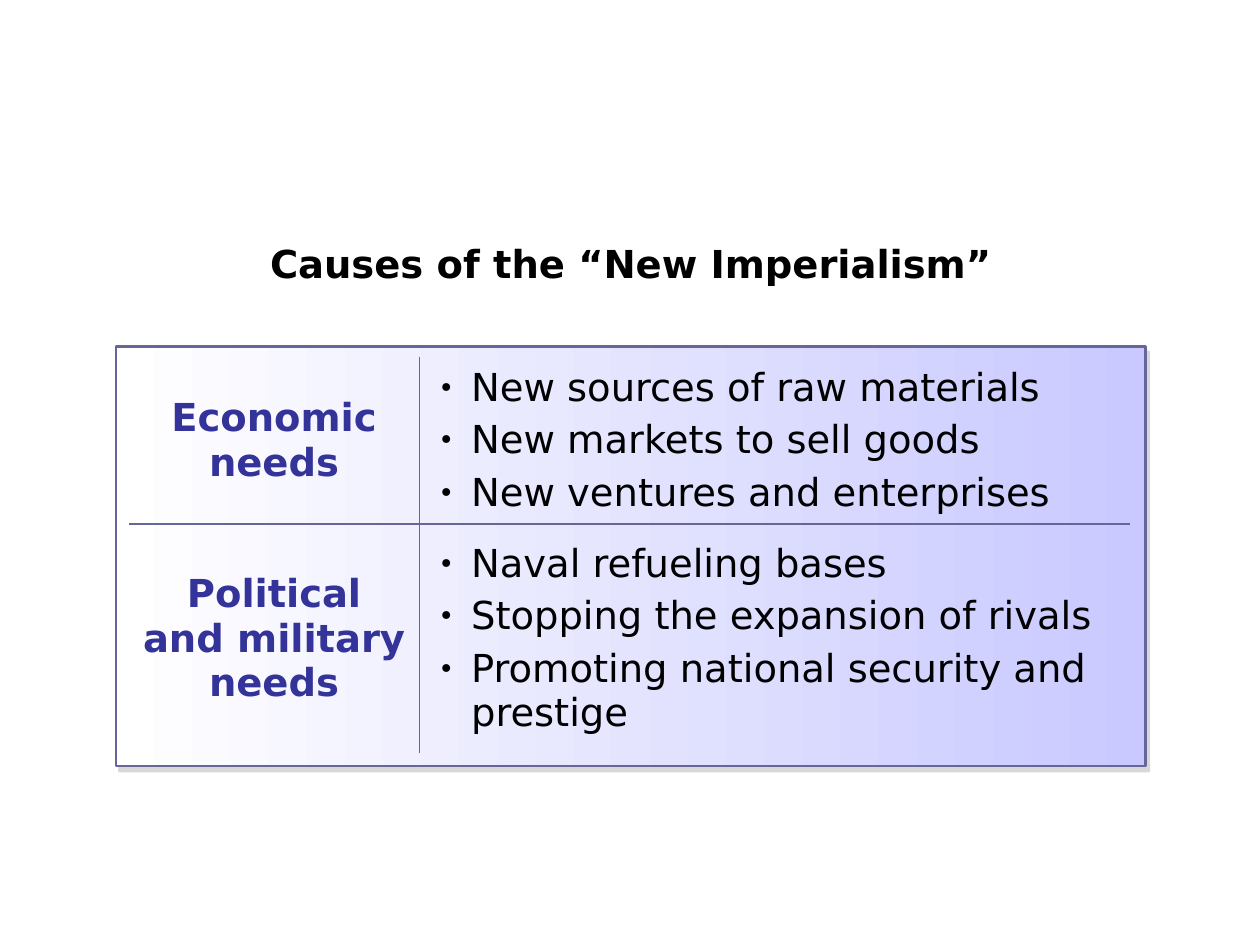
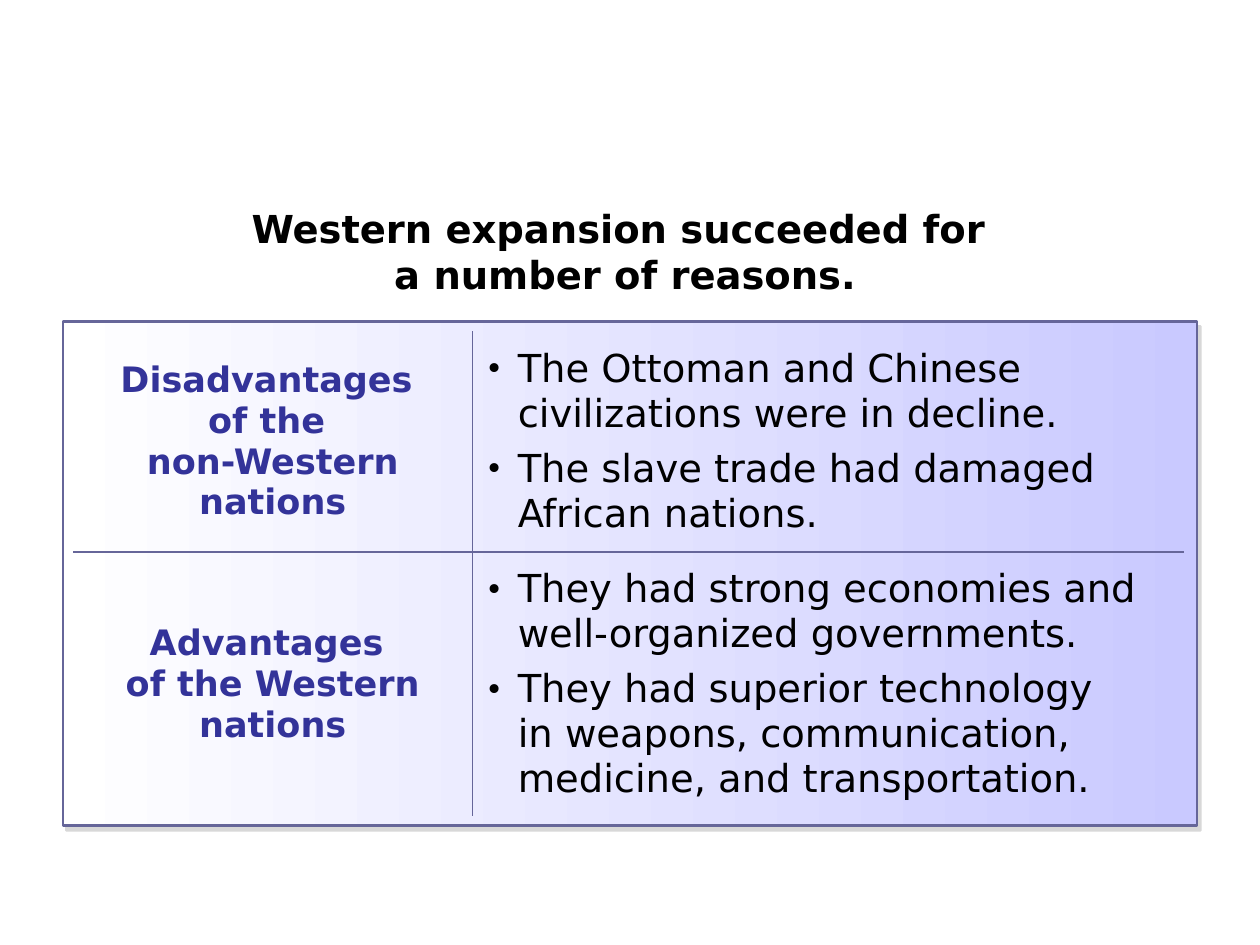
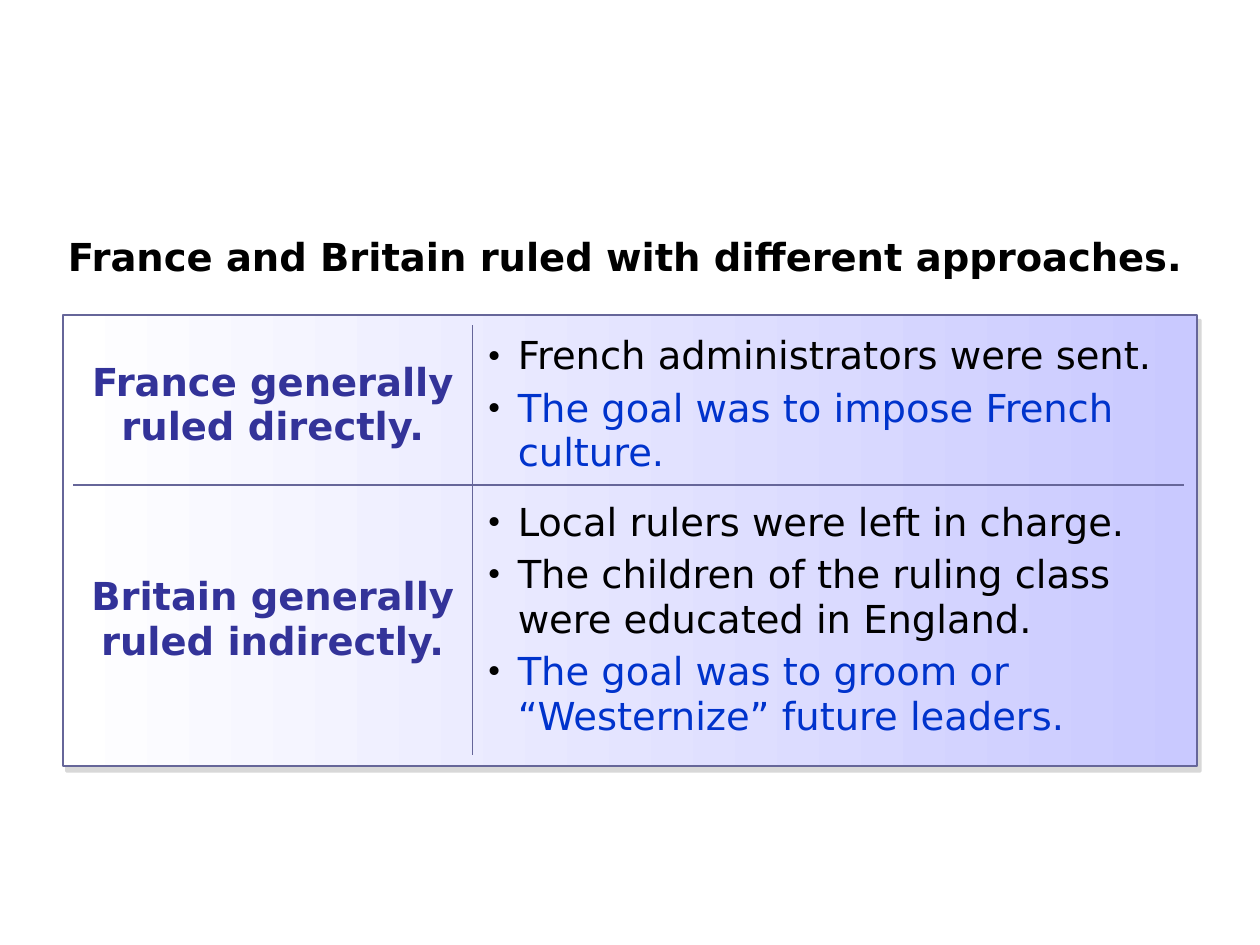
"""Build three slides that summarise the New Imperialism in titled two-row panels."""
import dataclasses

import lxml.etree
import pptx
import pptx.dml.color
import pptx.enum.shapes
import pptx.enum.text
import pptx.oxml.ns
import pptx.util

Inches = pptx.util.Inches
Pt = pptx.util.Pt
CENTER = pptx.enum.text.PP_ALIGN.CENTER


@dataclasses.dataclass(frozen=True)
class Theme:
    """Colours, type sizes and spacing shared by the slides."""
    font: str = "DejaVu Sans"
    text: str = "000000"
    label: str = "333399"
    goal: str = "0033CC"
    rule: str = "666699"
    shadow: str = "B2B2B2"
    panel_start: str = "FFFFFF"
    panel_end: str = "C9C9FF"
    body_size: int = 22
    small_size: int = 20
    lead: float = 0.2
    frame_width: float = 1.5
    rule_width: float = 1
    plain_table: str = "{2D5ABB26-0587-4C30-8999-92F81FD0307C}"


@dataclasses.dataclass(frozen=True)
class Box:
    """A rectangle in inches."""
    left: float
    top: float
    width: float
    height: float

    def lengths(self):
        """Return the four sides as lengths."""
        return [Inches(side) for side in dataclasses.astuple(self)]


@dataclasses.dataclass(frozen=True)
class Topic:
    """A row label with its points, of which some state a goal."""
    label: str
    points: tuple
    goals: tuple = ()


@dataclasses.dataclass(frozen=True)
class Panel:
    """The frame, grid and text settings of one slide's table."""
    box: Box
    columns: tuple
    rows: tuple
    inset: float = 0.08
    point_margin: float = 0.1
    bullet_percent: int = 80
    label_size: int = 22
    space_after: float = 0


THEME = Theme()


def rgb(value):
    """Return a colour from its hexadecimal value."""
    return pptx.dml.color.RGBColor.from_string(value)


def add_node(parent, tag, **attributes):
    """Append a drawing element with its attributes."""
    node = lxml.etree.SubElement(parent, pptx.oxml.ns.qn(f"a:{tag}"))
    for name, value in attributes.items():
        node.set(name, str(value))
    return node


def style_para(para, color, size, bold=False, space_after=0):
    """Set the font and spacing of a paragraph."""
    if space_after:
        para.space_after = Pt(space_after)
    else:
        para.space_before = Pt(size * THEME.lead)
    para.font.name = THEME.font
    para.font.size = Pt(size)
    para.font.bold = bold
    para.font.color.rgb = rgb(color)


def add_bullet(para, percent):
    """Give a paragraph a hanging bullet."""
    props = para._p.get_or_add_pPr()
    props.set("marL", str(Inches(0.26)))
    props.set("indent", str(-Inches(0.26)))
    add_node(add_node(props, "buClr"), "srgbClr", val=THEME.text)
    add_node(props, "buSzPct", val=percent * 1000)
    add_node(props, "buFont", typeface=THEME.font)
    add_node(props, "buChar", char="•")


def add_title(page, box, text):
    """Add the centred slide title."""
    frame = page.shapes.add_textbox(*box.lengths()).text_frame
    frame.word_wrap = True
    frame.auto_size = pptx.enum.text.MSO_AUTO_SIZE.SHAPE_TO_FIT_TEXT
    para = frame.paragraphs[0]
    para.text = text
    para.alignment = CENTER
    style_para(para, THEME.text, THEME.body_size, bold=True)


def add_frame(page, box):
    """Add the shaded panel with its outline and soft shadow."""
    frame = page.shapes.add_shape(
        pptx.enum.shapes.MSO_SHAPE.RECTANGLE, *box.lengths())
    frame.fill.gradient()
    frame.fill.gradient_angle = 0
    for stop, color in zip(frame.fill.gradient_stops,
                           (THEME.panel_start, THEME.panel_end)):
        stop.color.rgb = rgb(color)
    frame.line.color.rgb = rgb(THEME.rule)
    frame.line.width = Pt(THEME.frame_width)
    frame.shadow.inherit = False
    effects = frame._element.spPr.find(pptx.oxml.ns.qn("a:effectLst"))
    shadow = add_node(effects, "outerShdw", blurRad=0, dist=Pt(3.6),
                      dir=56 * 60000, algn="ctr", rotWithShape=0)
    color = add_node(shadow, "srgbClr", val=THEME.shadow)
    add_node(color, "alpha", val=50000)


def style_cell(cell, sides):
    """Draw the inner rules of a cell and leave it unfilled."""
    cell.vertical_anchor = pptx.enum.text.MSO_ANCHOR.MIDDLE
    props = cell._tc.get_or_add_tcPr()
    for side in sides:
        line = add_node(props, f"ln{side}", w=Pt(THEME.rule_width))
        add_node(add_node(line, "solidFill"), "srgbClr", val=THEME.rule)
    cell.fill.background()


def fill_label(cell, topic, size):
    """Write a row label."""
    para = cell.text_frame.paragraphs[0]
    para.text = topic.label
    para.alignment = CENTER
    style_para(para, THEME.label, size, bold=True)


def fill_points(cell, topic, panel):
    """Write the bulleted points of a topic."""
    cell.margin_left = cell.margin_right = Inches(panel.point_margin)
    frame = cell.text_frame
    for index, point in enumerate(topic.points + topic.goals):
        para = frame.add_paragraph() if index else frame.paragraphs[0]
        para.text = point
        add_bullet(para, panel.bullet_percent)
        color = THEME.goal if point in topic.goals else THEME.text
        style_para(para, color, THEME.body_size, space_after=panel.space_after)


def add_topics(page, panel, topics):
    """Add the table of topics inside the panel's box."""
    grid = Box(panel.box.left + panel.inset, panel.box.top + 0.08,
               sum(panel.columns), sum(panel.rows))
    table = page.shapes.add_table(
        len(topics), len(panel.columns), *grid.lengths()).table
    table.first_row = table.horz_banding = False
    table._tbl.tblPr[0].text = THEME.plain_table
    for column, width in zip(table.columns, panel.columns):
        column.width = Inches(width)
    for index, (topic, height) in enumerate(zip(topics, panel.rows)):
        table.rows[index].height = Inches(height)
        label, points = table.rows[index].cells
        edge = "T" if index else "B"
        style_cell(label, "R" + edge)
        style_cell(points, "L" + edge)
        fill_label(label, topic, panel.label_size)
        fill_points(points, topic, panel)


def add_summary(deck, title_box, title, panel, topics):
    """Add one slide with a title and a panel of topics."""
    page = deck.slides.add_slide(deck.slide_layouts[6])
    add_frame(page, panel.box)
    add_topics(page, panel, topics)
    add_title(page, title_box, title)


def main():
    """Build and save the deck."""
    deck = pptx.Presentation()
    deck.slide_width, deck.slide_height = Inches(10), Inches(7.5)
    add_summary(
        deck, Box(0.92, 1.86, 8.17, 0.47), "Causes of the “New Imperialism”",
        Panel(Box(0.92, 2.75, 8.17, 3.33), (2.31, 5.64), (1.33, 1.82),
              inset=0.1, point_margin=0.15, bullet_percent=70),
        (Topic("Economic needs",
               ("New sources of raw materials",
                "New markets to sell goods",
                "New ventures and enterprises")),
         Topic("Political and military needs",
               ("Naval refueling bases",
                "Stopping the expansion of rivals",
                "Promoting national security and prestige"))))
    add_summary(
        deck, Box(0.42, 1.58, 9.08, 0.83),
        "Western expansion succeeded for \na number of reasons.",
        Panel(Box(0.5, 2.55, 9, 4), (3.17, 5.65), (1.75, 2.1),
              label_size=THEME.small_size, space_after=6),
        (Topic("Disadvantages \nof the \nnon-Western nations",
               ("The Ottoman and Chinese civilizations were in decline.",
                "The slave trade had damaged African nations.")),
         Topic("Advantages \nof the Western nations",
               ("They had strong economies and well-organized governments.",
                "They had superior technology \nin weapons, communication, "
                "medicine, and transportation."))))
    add_summary(
        deck, Box(0.42, 1.8, 9.08, 0.47),
        "France and Britain ruled with different approaches.",
        Panel(Box(0.5, 2.5, 9, 3.58), (3.17, 5.65), (1.27, 2.14)),
        (Topic("France generally ruled directly.",
               ("French administrators were sent.",),
               ("The goal was to impose French culture.",)),
         Topic("Britain generally ruled indirectly.",
               ("Local rulers were left in charge.",
                "The children of the ruling class were educated in England."),
               ("The goal was to groom or “Westernize” future leaders.",))))
    deck.save("out.pptx")


if __name__ == "__main__":
    main()
